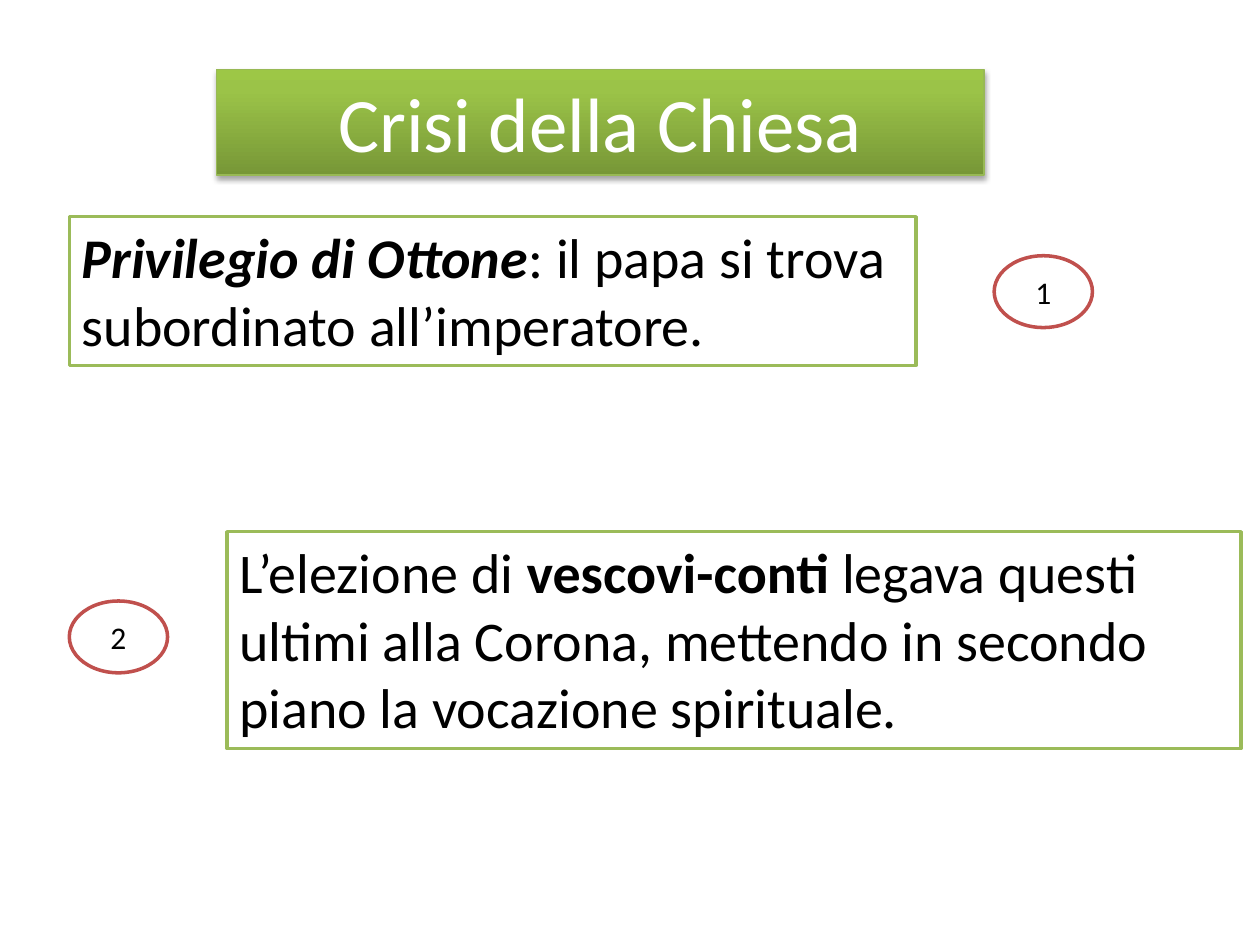
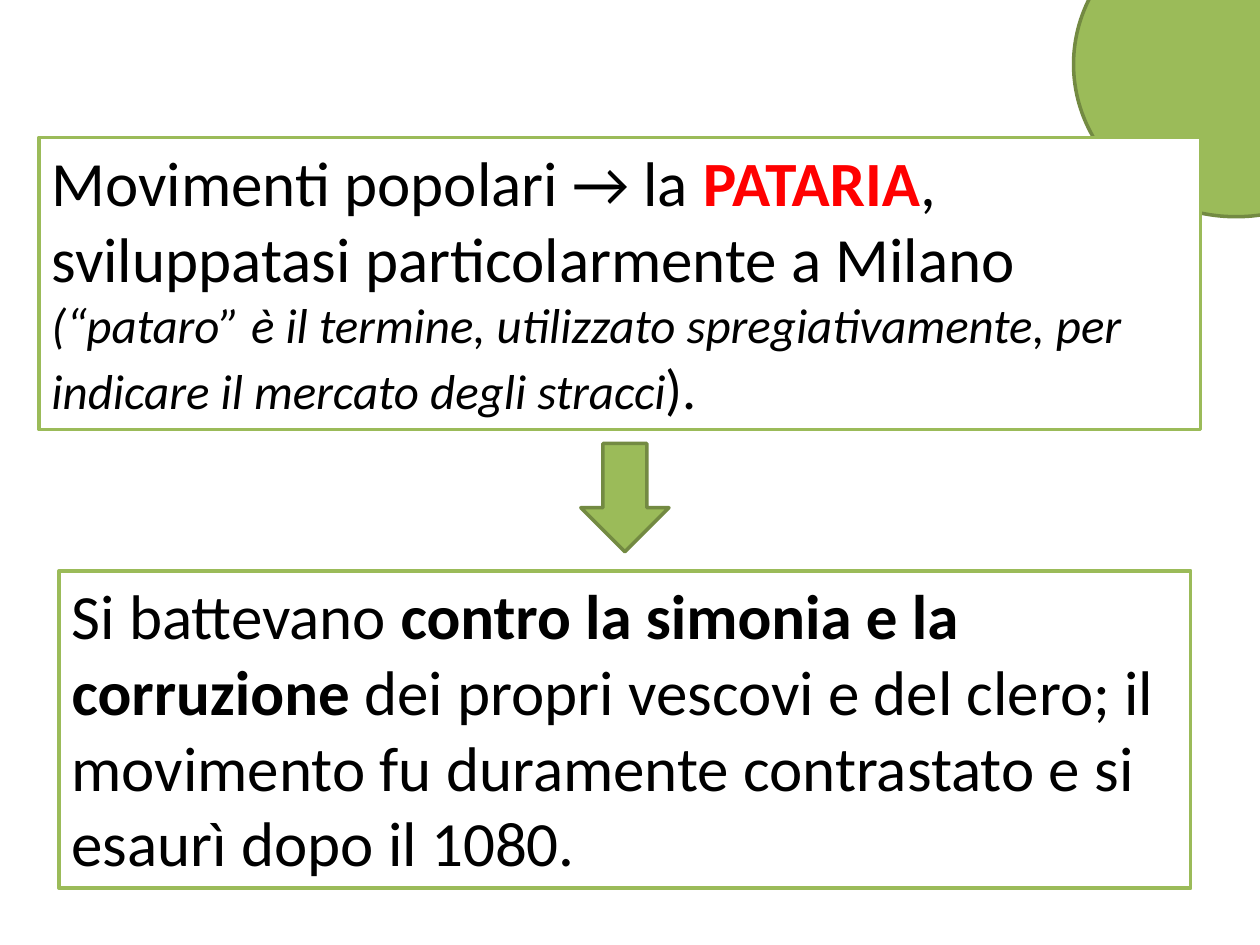
from copy import deepcopy

from lxml import etree
from pptx import Presentation
from pptx import util as u
from pptx.dml.color import RGBColor
from pptx.enum import shapes, text
from pptx.oxml.ns import qn

PX = 9144
FONT = "Calibri"

WHITE = RGBColor(0xFF, 0xFF, 0xFF)
BLACK = RGBColor(0x00, 0x00, 0x00)
RED = RGBColor(0xFF, 0x00, 0x00)
BRICK = RGBColor(0xC0, 0x50, 0x4D)
GREEN = RGBColor(0x9B, 0xBB, 0x59)
DARK_GREEN = RGBColor(0x73, 0x8A, 0x42)
TITLE_LINE = RGBColor(0x98, 0xB9, 0x55)
TITLE_STOPS = [
    (0, RGBColor(0x77, 0x97, 0x37)),
    (0.8, RGBColor(0x9B, 0xC3, 0x48)),
    (1, RGBColor(0x9D, 0xC7, 0x46)),
]

BOLD = {"bold": True}
BOLD_ITALIC = {"bold": True, "italic": True}
KINDS = shapes.MSO_SHAPE


class Deck:
    def __init__(self, width, height):
        self.prs = Presentation()
        self.prs.slide_width = width * PX
        self.prs.slide_height = height * PX
        self.s = None

    def slide(self):
        self.s = self.prs.slides.add_slide(self.prs.slide_layouts[6])

    def shape(self, kind, box, fill=GREEN, line=DARK_GREEN, weight=2):
        sp = self.s.shapes.add_shape(kind, *(n * PX for n in box))
        sp.shadow.inherit = False
        sp.fill.solid()
        sp.fill.fore_color.rgb = fill
        sp.line.color.rgb = line
        sp.line.width = u.Pt(weight)
        return sp

    def add_text(self, sp, runs, size, color=BLACK, centred=False):
        tf = sp.text_frame
        tf.word_wrap = True
        tf.auto_size = text.MSO_AUTO_SIZE.SHAPE_TO_FIT_TEXT
        tf.vertical_anchor = text.MSO_ANCHOR.MIDDLE if centred else text.MSO_ANCHOR.TOP
        p = tf.paragraphs[0]
        p.alignment = text.PP_ALIGN.CENTER if centred else text.PP_ALIGN.LEFT
        for words, changes in runs:
            r = p.add_run()
            r.text = words
            fmt = {"name": FONT, "size": size, "color": color, **changes}
            r.font.color.rgb = fmt.pop("color")
            fmt["size"] = u.Pt(fmt["size"])
            for key, value in fmt.items():
                setattr(r.font, key, value)

    def title(self, box, words):
        sp = self.shape(KINDS.RECTANGLE, box, line=TITLE_LINE, weight=0.75)
        sp.fill.gradient()
        sp.fill.gradient_angle = 90
        sp_pr = sp._element.spPr
        stops = sp_pr.find(".//" + qn("a:gsLst"))
        stops.append(deepcopy(stops[0]))
        for stop, (position, color) in zip(sp.fill.gradient_stops, TITLE_STOPS):
            stop.position = position
            stop.color.rgb = color
        shadow = etree.SubElement(
            sp_pr.find(qn("a:effectLst")), qn("a:outerShdw"),
            blurRad=str(u.Pt(3.1)), dist=str(u.Pt(1.8)), dir="5400000", rotWithShape="0")
        tint = etree.SubElement(shadow, qn("a:srgbClr"), val=str(BLACK))
        etree.SubElement(tint, qn("a:alpha"), val="35000")
        self.add_text(sp, [(words, {})], 44, WHITE, centred=True)

    def text_box(self, box, runs, size):
        self.add_text(self.shape(KINDS.RECTANGLE, box, WHITE, GREEN), runs, size)

    def number(self, left, top, n):
        sp = self.shape(KINDS.OVAL, (left, top, 78, 57), WHITE, BRICK)
        self.add_text(sp, [(str(n), {})], 18, centred=True)


def crisis_slide(deck):
    deck.slide()
    deck.title((172, 55, 609, 84), "Crisi della Chiesa")
    deck.text_box((180, 422, 805, 172), [
        ("L’elezione di ", {}),
        ("vescovi-conti", BOLD),
        (" legava questi ultimi alla Corona, mettendo in secondo piano "
         "la vocazione spirituale.", {}),
    ], 32)
    deck.text_box((55, 172, 672, 118), [
        ("Privilegio di Ottone", BOLD_ITALIC),
        (": il papa si trova subordinato all’imperatore.", {}),
    ], 32)
    deck.number(789, 203, 1)
    deck.number(55, 477, 2)


def pataria_slide(deck):
    deck.slide()
    deck.shape(KINDS.OVAL, (852, -70, 258, 242))
    deck.text_box((31, 109, 922, 232), [
        ("Movimenti popolari → la ", {}),
        ("PATARIA", {"bold": True, "color": RED}),
        (", sviluppatasi particolarmente a Milano ", {}),
        ("(“pataro” è il termine, utilizzato spregiativamente, per indicare "
         "il mercato degli stracci", {"size": 28, "italic": True}),
        (").", {"size": 32}),
    ], 36)
    deck.text_box((47, 453, 898, 252), [
        ("Si battevano ", {}),
        ("contro la simonia e la corruzione ", BOLD),
        ("dei propri vescovi e del clero; il movimento fu duramente "
         "contrastato e si esaurì dopo il 1080.", {}),
    ], 36)
    deck.shape(KINDS.DOWN_ARROW, (461, 352, 70, 86))


def main():
    deck = Deck(1000, 750)
    crisis_slide(deck)
    pataria_slide(deck)
    deck.prs.save("out.pptx")


if __name__ == "__main__":
    main()
